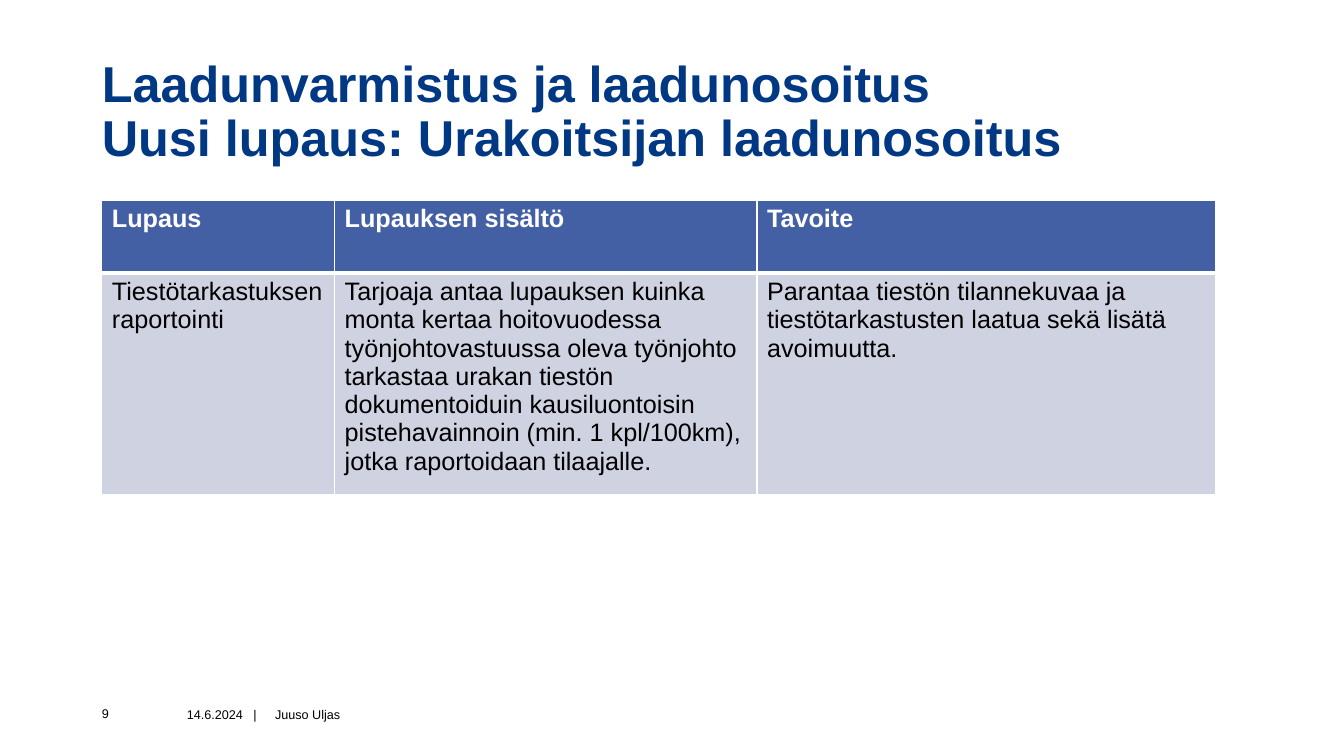
from lxml.etree import SubElement
from pptx import Presentation
from pptx.dml.color import RGBColor
from pptx.enum.text import MSO_ANCHOR as Anchor
from pptx.oxml.ns import qn
from pptx.util import Pt

NAVY = RGBColor(0x00, 0x38, 0x83)
HEADER_BLUE = RGBColor(0x44, 0x60, 0xA5)
BODY_GREY = RGBColor(0xCF, 0xD2, 0xE1)
WHITE = RGBColor(0xFF, 0xFF, 0xFF)
BLACK = RGBColor(0, 0, 0)

LEFT = 72.75
FOOTER_TOP, FOOTER_HEIGHT = 502, 16
COLUMN_WIDTHS = [166.3, 301.7, 327.6]
ROW_HEIGHTS = [52, 148]
ROWS = [
    ["Lupaus", "Lupauksen sisältö", "Tavoite"],
    [
        "Tiestötarkastuksen raportointi",
        "Tarjoaja antaa lupauksen kuinka monta kertaa hoitovuodessa "
        "työnjohtovastuussa oleva työnjohto tarkastaa urakan tiestön "
        "dokumentoiduin kausiluontoisin pistehavainnoin (min. 1 kpl/100km), "
        "jotka raportoidaan tilaajalle.",
        "Parantaa tiestön tilannekuvaa ja tiestötarkastusten laatua sekä "
        "lisätä avoimuutta.",
    ],
]


def write_text(text_frame, text, size=9, color=BLACK, bold=False, spacing=1.0, tab=None):
    """Fill the frame with one paragraph; tab is a tab stop in points."""
    paragraph = text_frame.paragraphs[0]
    paragraph.text = text
    paragraph.line_spacing = spacing
    if tab:
        tab_list = SubElement(paragraph._p.get_or_add_pPr(), qn("a:tabLst"))
        SubElement(tab_list, qn("a:tab"), pos=str(Pt(tab)), algn="l")
    for run in paragraph.runs:
        run.font.name = "Arial"
        run.font.size = Pt(size)
        run.font.bold = bold
        run.font.color.rgb = color


def add_text_box(left, top, width, height, text, **text_format):
    frame = slide.shapes.add_textbox(Pt(left), Pt(top), Pt(width), Pt(height)).text_frame
    frame.word_wrap = True
    frame.vertical_anchor = Anchor.MIDDLE
    frame.margin_left = frame.margin_top = frame.margin_right = frame.margin_bottom = 0
    write_text(frame, text, **text_format)


presentation = Presentation()
presentation.slide_width = Pt(960)
presentation.slide_height = Pt(540)
slide = presentation.slides.add_slide(presentation.slide_layouts[6])

add_text_box(LEFT, 36.75, 837.5, 88,
             "Laadunvarmistus ja laadunosoitus\nUusi lupaus: Urakoitsijan laadunosoitus",
             size=36, color=NAVY, bold=True, spacing=0.9)

table = slide.shapes.add_table(len(ROWS), len(COLUMN_WIDTHS), Pt(LEFT), Pt(142.9),
                               Pt(sum(COLUMN_WIDTHS)), Pt(sum(ROW_HEIGHTS))).table
for column, width in zip(table.columns, COLUMN_WIDTHS):
    column.width = Pt(width)
for row_index, (texts, height) in enumerate(zip(ROWS, ROW_HEIGHTS)):
    table.rows[row_index].height = Pt(height)
    is_header = row_index == 0
    for column_index, text in enumerate(texts):
        cell = table.cell(row_index, column_index)
        properties = cell._tc.get_or_add_tcPr()
        for side in ("lnL", "lnR", "lnT", "lnB"):
            is_divider = side == ("lnB" if is_header else "lnT")
            border = SubElement(properties, qn(f"a:{side}"), w=str(Pt(3 if is_divider else 1)))
            border_fill = SubElement(border, qn("a:solidFill"))
            SubElement(border_fill, qn("a:srgbClr"), val=str(WHITE))
        cell.fill.solid()
        cell.fill.fore_color.rgb = HEADER_BLUE if is_header else BODY_GREY
        write_text(cell.text_frame, text, size=18, bold=is_header,
                   color=WHITE if is_header else BLACK)

add_text_box(LEFT, FOOTER_TOP, 38, FOOTER_HEIGHT, "9")
add_text_box(133.5, FOOTER_TOP, 58, FOOTER_HEIGHT, "14.6.2024\t|", spacing=1.1, tab=47.5)
add_text_box(196.5, FOOTER_TOP, 324, FOOTER_HEIGHT, "Juuso Uljas", spacing=1.1)

presentation.save("out.pptx")
